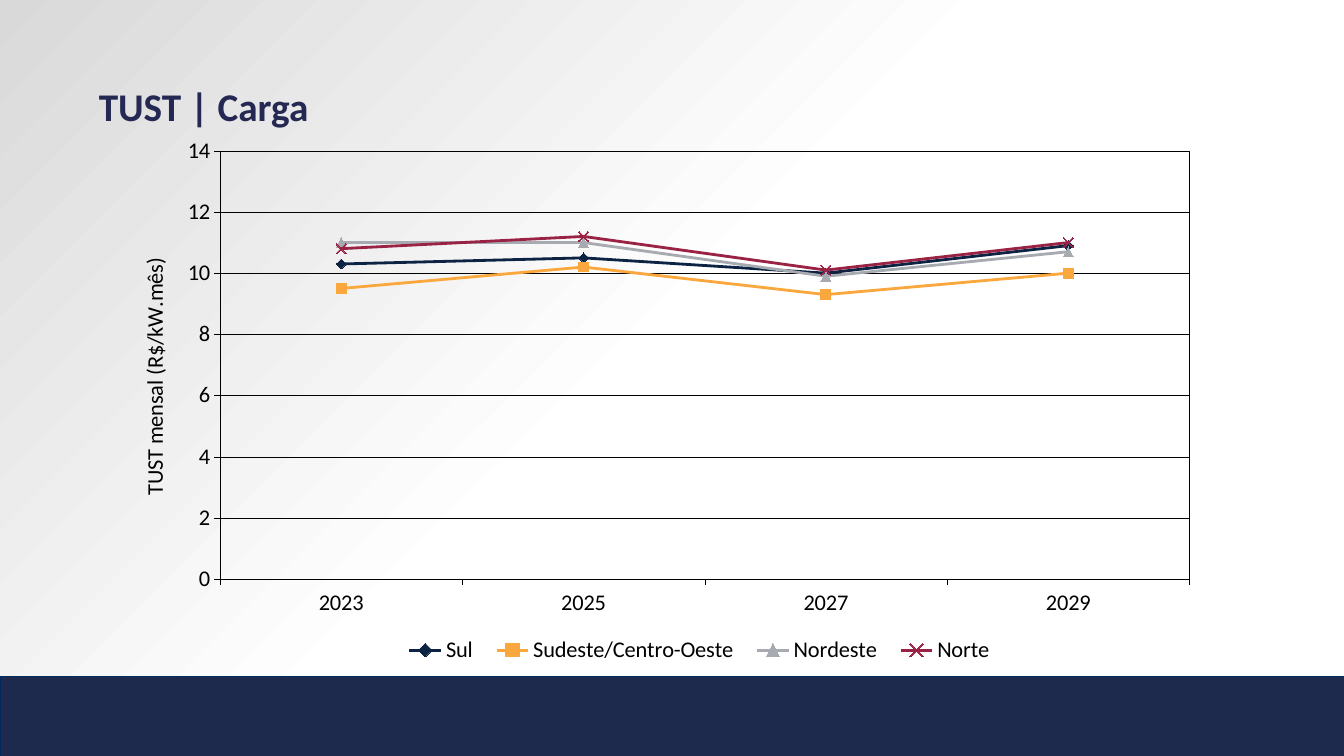
import pptx
import pptx.chart.data
import pptx.dml.color
import pptx.enum.chart
import pptx.enum.shapes
import pptx.enum.text
import pptx.oxml
import pptx.oxml.ns
import pptx.util

PX = 9144  # EMU per px, 100 px to the inch
COLOURS = {
    "haze": "D9D9D9", "white": "FFFFFF", "black": "000000",
    "footer": "1E294E", "footer_edge": "002A5E", "title": "242852",
    "navy": "0C2344", "orange": "FAA73D", "amber": "FFC000",
    "grey": "A7ABB1", "wine": "9A2244",
}
YEARS = ["2023", "2025", "2027", "2029"]
# region, monthly tariffs, line colour, marker style, marker fill
REGIONS = [
    ("Sul", (10.3, 10.5, 10, 10.9), "navy", "DIAMOND", "navy"),
    ("Sudeste/Centro-Oeste", (9.5, 10.2, 9.3, 10), "orange", "SQUARE", "amber"),
    ("Nordeste", (11, 11, 9.9, 10.7), "grey", "TRIANGLE", "grey"),
    ("Norte", (10.8, 11.2, 10.1, 11), "wine", "X", None),
]
# Shares of the chart's width and height
PLOT_FRAME = {"x": 0.079, "y": 0.039, "w": 0.902, "h": 0.769}
LEGEND_FRAME = {"x": 0.24, "y": 0.9, "w": 0.57, "h": 0.07}


def colour(name):
    return pptx.dml.color.RGBColor.from_string(COLOURS[name])


def format_font(font, size=16, ink="black", bold=False):
    font.name = "Calibri"
    font.size = pptx.util.Pt(size)
    font.bold = bold
    font.color.rgb = colour(ink)


def write(frame, text, **style):
    """Put one formatted run of text in a text frame."""
    paragraph = frame.paragraphs[0]
    run = paragraph.add_run()
    run.text = text
    format_font(run.font, **style)
    return paragraph


def stroke(line, ink, width):
    line.color.rgb = colour(ink)
    line.width = pptx.util.Pt(width)


def place(part, index, shares, target=""):
    """Give a part of the chart a fixed place."""
    for layout in part.findall(pptx.oxml.ns.qn("c:layout")):
        part.remove(layout)
    spans = "".join(f'<c:{side} val="{share}"/>' for side, share in shares.items())
    part.insert(index, pptx.oxml.parse_xml(
        f'<c:layout {pptx.oxml.ns.nsdecls("c")}><c:manualLayout>{target}'
        f'<c:xMode val="edge"/><c:yMode val="edge"/>{spans}'
        '</c:manualLayout></c:layout>'))


class Deck:
    def __init__(self, width, height):
        self.file = pptx.Presentation()
        self.file.slide_width, self.file.slide_height = width * PX, height * PX
        self.slide = self.file.slides.add_slide(self.file.slide_layouts[5])

    def band(self, *box):
        band = self.slide.shapes.add_shape(
            pptx.enum.shapes.MSO_SHAPE.RECTANGLE, *(n * PX for n in box))
        band.shadow.inherit = False
        return band

    def backdrop(self, *box):
        backdrop = self.band(*box)
        backdrop.line.fill.background()
        backdrop.fill.gradient()
        backdrop.fill.gradient_angle = 315
        stops = zip(backdrop.fill.gradient_stops, ("haze", "white"), (0, 0.5))
        for stop, ink, position in stops:
            stop.color.rgb = colour(ink)
            stop.position = position

    def footer(self, *box):
        footer = self.band(*box)
        footer.fill.solid()
        footer.fill.fore_color.rgb = colour("footer")
        stroke(footer.line, "footer_edge", 0.5)

    def title(self, text, *box):
        title = self.slide.shapes.title
        title.left, title.top, title.width, title.height = (n * PX for n in box)
        frame = title.text_frame
        frame.word_wrap = True
        frame.vertical_anchor = pptx.enum.text.MSO_ANCHOR.MIDDLE
        heading = write(frame, text, size=28, ink="title", bold=True)
        heading.alignment = pptx.enum.text.PP_ALIGN.LEFT
        heading.line_spacing = 0.9
        # The title sits in front of the bands
        self.slide.shapes._spTree.append(title._element)

    def line_chart(self, axis_title, *box):
        data = pptx.chart.data.CategoryChartData()
        data.categories = YEARS
        for region, tariffs, *_ in REGIONS:
            data.add_series(region, tariffs)
        chart = self.slide.shapes.add_chart(
            pptx.enum.chart.XL_CHART_TYPE.LINE_MARKERS,
            *(n * PX for n in box), data).chart
        chart.has_title = False
        format_font(chart.font)
        chart.plots[0].vary_by_categories = False
        self.style_series(chart)
        self.style_axes(chart, axis_title)
        self.frame_plot(chart)
        chart.has_legend = True
        legend = chart.legend
        legend.position = pptx.enum.chart.XL_LEGEND_POSITION.BOTTOM
        legend.include_in_layout = False
        format_font(legend.font)
        place(legend._element, 1, LEGEND_FRAME)

    def style_series(self, chart):
        for series, region in zip(chart.plots[0].series, REGIONS):
            _, _, ink, symbol, filling = region
            series.smooth = False
            stroke(series.format.line, ink, 2)
            marker = series.marker
            marker.style = pptx.enum.chart.XL_MARKER_STYLE[symbol]
            marker.size = 7
            stroke(marker.format.line, ink, 0.75)
            if filling:
                marker.format.fill.solid()
                marker.format.fill.fore_color.rgb = colour(filling)
            else:
                marker.format.fill.background()

    def style_axes(self, chart, axis_title):
        for axis in (chart.category_axis, chart.value_axis):
            axis.major_tick_mark = pptx.enum.chart.XL_TICK_MARK.OUTSIDE
            axis.minor_tick_mark = pptx.enum.chart.XL_TICK_MARK.NONE
            format_font(axis.tick_labels.font)
            stroke(axis.format.line, "black", 0.25)
        tariff = chart.value_axis
        tariff.minimum_scale, tariff.maximum_scale = 0, 14
        tariff.major_unit = 2
        tariff.tick_labels.number_format = "General"
        tariff.tick_labels.number_format_is_linked = False
        tariff.has_major_gridlines = True
        stroke(tariff.major_gridlines.format.line, "black", 0.25)
        frame = tariff.axis_title.text_frame
        write(frame, axis_title)
        frame._txBody.bodyPr.set("rot", "-5400000")

    def frame_plot(self, chart):
        """Fix the inner plot area and outline it."""
        plot = chart._chartSpace.chart.plotArea
        place(plot, 0, PLOT_FRAME, '<c:layoutTarget val="inner"/>')
        plot.append(pptx.oxml.parse_xml(
            f'<c:spPr {pptx.oxml.ns.nsdecls("c", "a")}><a:noFill/>'
            '<a:ln w="3175"><a:solidFill>'
            f'<a:srgbClr val="{COLOURS["black"]}"/></a:solidFill></a:ln></c:spPr>'))


def main():
    deck = Deck(1333, 750)
    # Background
    deck.backdrop(0, -4, 1333, 685)
    deck.footer(0, 671, 1333, 79)
    # Content
    deck.title("TUST | Carga", 88, 66, 1221, 84)
    deck.line_chart("TUST mensal (R$/kW.mês)", 134, 128, 1066, 553)
    deck.file.save("out.pptx")


if __name__ == "__main__":
    main()
